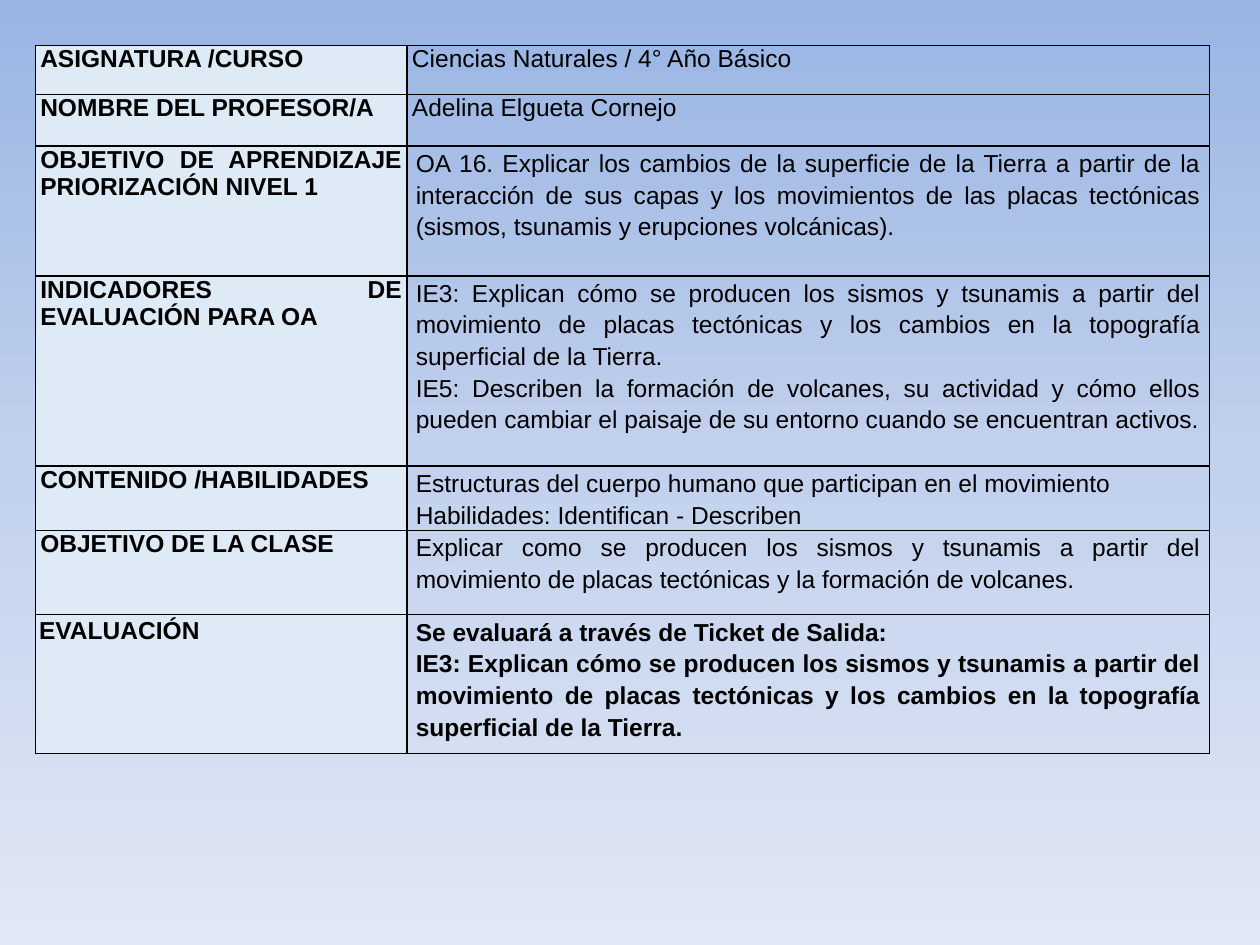
import copy
from dataclasses import dataclass

import lxml.etree
import pptx
import pptx.dml.color
import pptx.enum.text
import pptx.oxml.ns
import pptx.util


@dataclass(frozen=True)
class Theme:
    background: tuple = ((0, "9AB5E4"), (0.5, "C2D1ED"), (1, "E1E8F5"))
    label_fill: str = "DEEAF6"
    ink: str = "000000"
    font: str = "Arial"
    size: int = 14
    border_points: int = 1
    loose_spacing: float = 1.15


@dataclass(frozen=True)
class TextStyle:
    """Cell margins in inches, weight and line spacing."""
    side: float = 0.04
    top: float = 0
    bold: bool = False
    spacing: float = None


THEME = Theme()
LABEL = TextStyle(bold=True)
LAST_LABEL = TextStyle(side=0.03, top=0.02, bold=True)
SHORT = TextStyle()
LONG = TextStyle(side=0.07, spacing=THEME.loose_spacing)
LONG_BOLD = TextStyle(side=0.07, bold=True, spacing=THEME.loose_spacing)

TABLE_LEFT, TABLE_TOP = 0.28, 0.36
COLUMN_WIDTHS = (2.95, 6.37)

EARTHQUAKE_INDICATOR = (
    "IE3: Explican cómo se producen los sismos y tsunamis a partir del movimiento de placas "
    "tectónicas y los cambios en la topografía superficial de la Tierra."
)

# Height, label, label style, content, content style
ROWS = (
    (0.39, "ASIGNATURA /CURSO", LABEL, "Ciencias Naturales / 4° Año Básico", SHORT),
    (0.41, "NOMBRE DEL PROFESOR/A", LABEL, "Adelina Elgueta Cornejo", SHORT),
    (1.03, "OBJETIVO DE APRENDIZAJE PRIORIZACIÓN NIVEL 1", LABEL,
     "OA 16. Explicar los cambios de la superficie de la Tierra a partir de la interacción de sus "
     "capas y los movimientos de las placas tectónicas (sismos, tsunamis y erupciones volcánicas).",
     LONG),
    (1.51, "INDICADORES DE EVALUACIÓN PARA OA", LABEL,
     EARTHQUAKE_INDICATOR + "\n"
     "IE5: Describen la formación de volcanes, su actividad y cómo ellos pueden cambiar el paisaje "
     "de su entorno cuando se encuentran activos.", LONG),
    (0.51, "CONTENIDO /HABILIDADES", LABEL,
     "Estructuras del cuerpo humano que participan en el movimiento\n"
     "Habilidades: Identifican - Describen", LONG),
    (0.67, "OBJETIVO DE LA CLASE", LABEL,
     "Explicar como se producen los sismos y tsunamis a partir del movimiento de placas tectónicas "
     "y la formación de volcanes.", LONG),
    (1.1, "EVALUACIÓN", LAST_LABEL,
     "Se evaluará a través de Ticket de Salida:\n" + EARTHQUAKE_INDICATOR, LONG_BOLD),
)


def rgb(value):
    return pptx.dml.color.RGBColor.from_string(value)


def paint_background(slide):
    fill = slide.background.fill
    fill.gradient()
    fill.gradient_angle = 270  # counter-clockwise, so the colours run downwards
    stop_list = slide.element.find(".//" + pptx.oxml.ns.qn("a:gsLst"))
    stop_list.append(copy.deepcopy(stop_list[0]))
    for stop, (position, color) in zip(fill.gradient_stops, THEME.background):
        stop.position = position
        stop.color.rgb = rgb(color)


def add_borders(cell):
    properties = cell._tc.get_or_add_tcPr()
    for side in ("lnL", "lnR", "lnT", "lnB"):
        line = lxml.etree.SubElement(properties, pptx.oxml.ns.qn("a:" + side),
                                     w=str(pptx.util.Pt(THEME.border_points)))
        solid = lxml.etree.SubElement(line, pptx.oxml.ns.qn("a:solidFill"))
        lxml.etree.SubElement(solid, pptx.oxml.ns.qn("a:srgbClr"), val=THEME.ink)


def fill_cell(cell, text, style, color=None):
    add_borders(cell)
    if color:
        cell.fill.solid()
        cell.fill.fore_color.rgb = rgb(color)
    else:
        cell.fill.background()
    cell.margin_left = cell.margin_right = pptx.util.Inches(style.side)
    cell.margin_top = cell.margin_bottom = pptx.util.Inches(style.top)
    cell.vertical_anchor = pptx.enum.text.MSO_ANCHOR.TOP
    cell.text_frame.text = text
    for paragraph in cell.text_frame.paragraphs:
        paragraph.alignment = pptx.enum.text.PP_ALIGN.JUSTIFY
        paragraph.line_spacing = style.spacing
        for run in paragraph.runs:
            run.font.name = THEME.font
            run.font.size = pptx.util.Pt(THEME.size)
            run.font.bold = style.bold
            run.font.color.rgb = rgb(THEME.ink)


def add_lesson_table(slide):
    width, height = sum(COLUMN_WIDTHS), sum(row[0] for row in ROWS)
    box = [pptx.util.Inches(length) for length in (TABLE_LEFT, TABLE_TOP, width, height)]
    table = slide.shapes.add_table(len(ROWS), len(COLUMN_WIDTHS), *box).table
    table.first_row = table.horz_banding = False
    for column, column_width in zip(table.columns, COLUMN_WIDTHS):
        column.width = pptx.util.Inches(column_width)
    for row, (row_height, label, label_style, content, content_style) in zip(table.rows, ROWS):
        row.height = pptx.util.Inches(row_height)
        label_cell, content_cell = row.cells
        fill_cell(label_cell, label, label_style, THEME.label_fill)
        fill_cell(content_cell, content, content_style)


def main():
    presentation = pptx.Presentation()
    presentation.slide_width = pptx.util.Inches(10)
    presentation.slide_height = pptx.util.Inches(7.5)
    blank_layout = presentation.slide_layouts[6]
    slide = presentation.slides.add_slide(blank_layout)
    paint_background(slide)
    add_lesson_table(slide)
    presentation.save("out.pptx")


if __name__ == "__main__":
    main()
